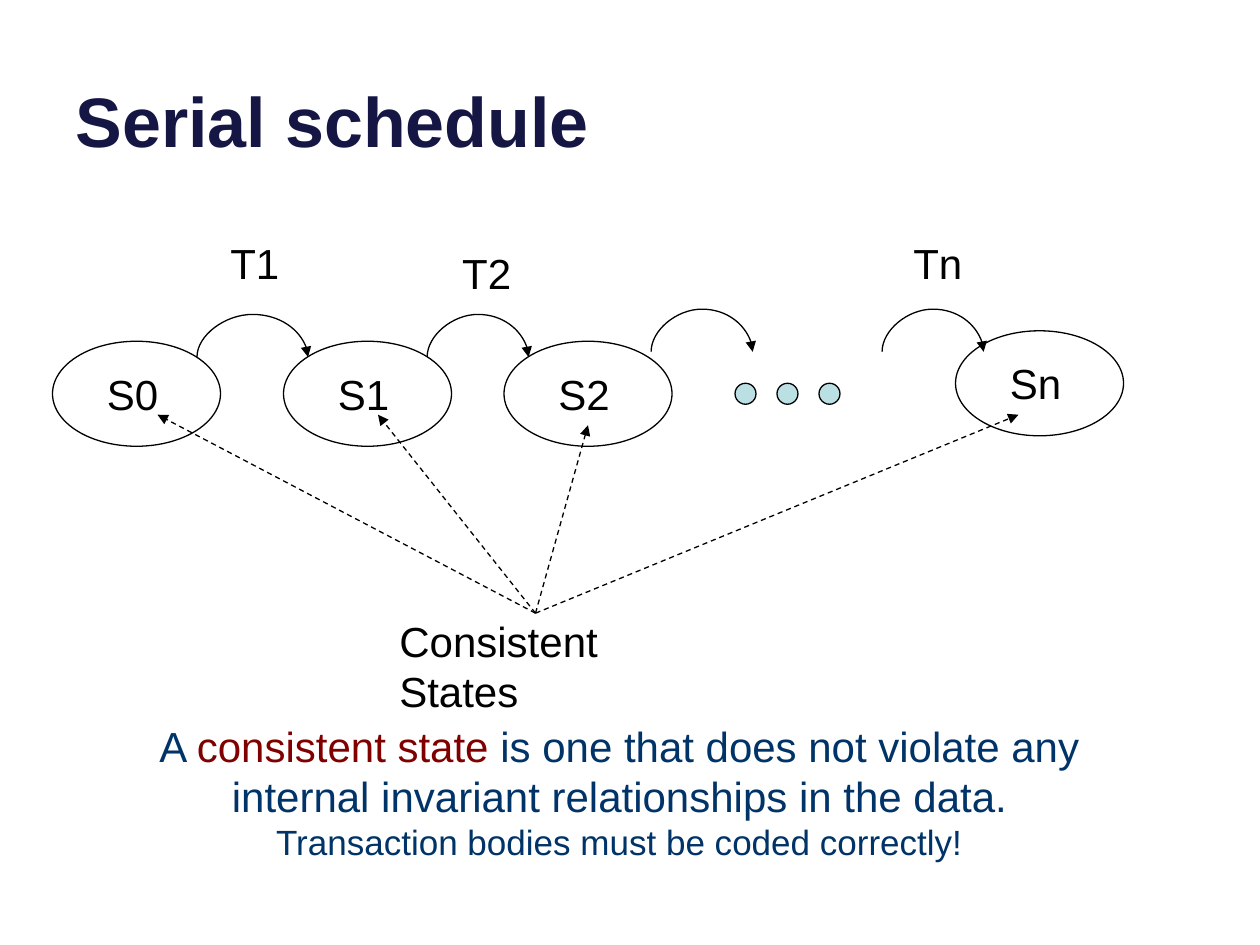
import dataclasses
from typing import Any

import pptx
import pptx.dml.color
import pptx.enum.dml
import pptx.enum.shapes
import pptx.enum.text
import pptx.oxml
import pptx.oxml.ns
import pptx.util

RGBColor = pptx.dml.color.RGBColor
BLACK = RGBColor(0x00, 0x00, 0x00)
TITLE_NAVY = RGBColor(0x16, 0x16, 0x45)
NOTE_BLUE = RGBColor(0x00, 0x33, 0x67)
TERM_RED = RGBColor(0x80, 0x00, 0x00)
DOT_FILL = RGBColor(0xBB, 0xE0, 0xE3)

FONT = "Arial"
CELLS_PER_INCH = 12  # the slide is a grid of 120 columns by 90 rows
STATE_SIZE = (16, 10)
DOT_SIZE = 2
ARC_DEPTH = pptx.util.Emu(1588)  # a curved connector needs some depth to bulge from
ARC_BULGE = -214


@dataclasses.dataclass(frozen=True)
class State:
    name: str
    column: float
    row: float


@dataclasses.dataclass(frozen=True)
class Transition:
    start: float
    end: float
    row: float


@dataclasses.dataclass(frozen=True)
class Label:
    text: str
    column: float
    row: float
    columns: float = 7.08


STATES = [State("Sn", 91, 31.5), State("S0", 5, 32.5),
          State("S1", 27, 32.5), State("S2", 48, 32.5)]
TRANSITIONS = [Transition(84, 93.67, 33.5), Transition(18.75, 29.33, 34),
               Transition(40.67, 50.33, 34), Transition(62, 71.67, 33.5)]
LABELS = [Label("T1", 20.75, 22), Label("T2", 42.83, 23),
          Label("Tn", 85.8, 22), Label("Consistent States", 36.85, 58, 33.7)]
DOT_COLUMNS = range(70, 79, 4)
POINTER_START = (51, 58.4)
POINTER_ENDS = [(36, 39.5), (15, 39.5), (56, 40.5), (97, 39.5)]


def cells(count: float) -> pptx.util.Length:
    return pptx.util.Inches(count / CELLS_PER_INCH)


def add_span(para: Any, text: str, size: float = 24,
             color: RGBColor = BLACK, bold: bool = False) -> None:
    span = para.add_run()
    span.text = text
    span.font.name = FONT
    span.font.size = pptx.util.Pt(size)
    span.font.bold = bold
    span.font.color.rgb = color


def add_text_box(shapes: Any, column: float, row: float, columns: float,
                 rows: float, wrap: bool) -> Any:
    box = shapes.add_textbox(cells(column), cells(row), cells(columns), cells(rows))
    box.text_frame.word_wrap = wrap
    box.text_frame.auto_size = pptx.enum.text.MSO_AUTO_SIZE.SHAPE_TO_FIT_TEXT
    return box


def add_label(shapes: Any, label: Label) -> None:
    box = add_text_box(shapes, label.column, label.row, label.columns, 6, False)
    add_span(box.text_frame.paragraphs[0], label.text)


def style_line(line: Any) -> None:
    line.color.rgb = BLACK
    line.width = pptx.util.Pt(0.75)


def add_ellipse(shapes: Any, column: float, row: float,
                columns: float, rows: float) -> Any:
    ellipse = shapes.add_shape(pptx.enum.shapes.MSO_SHAPE.OVAL, cells(column),
                               cells(row), cells(columns), cells(rows))
    ellipse.shadow.inherit = False
    ellipse.fill.background()
    style_line(ellipse.line)
    return ellipse


def add_state(page: Any, state: State) -> None:
    group = page.shapes.add_group_shape()
    add_ellipse(group.shapes, state.column, state.row, *STATE_SIZE)
    add_label(group.shapes, Label(state.name, state.column + 4, state.row + 2, 7.32))


def finish_arrow(connector: Any, dashed: bool = False) -> None:
    """Style the line, put a head at its end and take away its shadow."""
    style_line(connector.line)
    if dashed:
        connector.line.dash_style = pptx.enum.dml.MSO_LINE.DASH
    properties = connector._element.spPr
    line = properties.find(pptx.oxml.ns.qn("a:ln"))
    namespace = pptx.oxml.ns.nsdecls("a")
    line.append(pptx.oxml.parse_xml(f'<a:tailEnd {namespace} type="triangle"/>'))
    properties.append(pptx.oxml.parse_xml(f"<a:effectLst {namespace}/>"))


def add_transition(page: Any, transition: Transition) -> None:
    """Draw an upright curved connector and turn it a quarter, so it bulges up."""
    middle = cells((transition.start + transition.end) / 2)
    half = (transition.end - transition.start) / 2
    arc = page.shapes.add_connector(
        pptx.enum.shapes.MSO_CONNECTOR.CURVE, middle, cells(transition.row + half),
        middle + ARC_DEPTH, cells(transition.row - half))
    properties = arc._element.spPr
    properties.find(pptx.oxml.ns.qn("a:xfrm")).set("rot", str(90 * 60000))
    geometry = properties.find(pptx.oxml.ns.qn("a:prstGeom"))
    for adjustments in geometry.findall(pptx.oxml.ns.qn("a:avLst")):
        geometry.remove(adjustments)
    geometry.append(pptx.oxml.parse_xml(
        f'<a:avLst {pptx.oxml.ns.nsdecls("a")}>'
        f'<a:gd name="adj1" fmla="val {ARC_BULGE * 100000}"/></a:avLst>'))
    finish_arrow(arc)


def add_pointer(page: Any, end: tuple[float, float]) -> None:
    pointer = page.shapes.add_connector(
        pptx.enum.shapes.MSO_CONNECTOR.STRAIGHT,
        *map(cells, POINTER_START), *map(cells, end))
    finish_arrow(pointer, dashed=True)


def add_title(page: Any) -> None:
    title = page.shapes.title
    title.left, title.top = cells(6), cells(-4.4)
    title.width, title.height = cells(108), cells(20.4)
    title.text_frame.vertical_anchor = pptx.enum.text.MSO_ANCHOR.BOTTOM
    para = title.text_frame.paragraphs[0]
    para.alignment = pptx.enum.text.PP_ALIGN.LEFT
    add_span(para, "Serial schedule", 40, TITLE_NAVY, bold=True)


def add_definition(page: Any) -> None:
    frame = add_text_box(page.shapes, 8, 68, 102, 14.9, True).text_frame
    definition, remark = frame.paragraphs[0], frame.add_paragraph()
    for para in (definition, remark):
        para.alignment = pptx.enum.text.PP_ALIGN.CENTER
    add_span(definition, "A ", color=NOTE_BLUE)
    add_span(definition, "consistent state", color=TERM_RED)
    add_span(definition, " is one that does not violate any internal invariant "
             "relationships in the data.", color=NOTE_BLUE)
    add_span(remark, "Transaction bodies must be coded correctly!", 20, NOTE_BLUE)


def main() -> None:
    deck = pptx.Presentation()
    deck.slide_width, deck.slide_height = cells(120), cells(90)
    page = deck.slides.add_slide(deck.slide_layouts.get_by_name("Title Only"))
    add_title(page)
    for state in STATES:
        add_state(page, state)
    for transition in TRANSITIONS:
        add_transition(page, transition)
    for label in LABELS:
        add_label(page.shapes, label)
    for column in DOT_COLUMNS:
        dot = add_ellipse(page.shapes, column, 36.5, DOT_SIZE, DOT_SIZE)
        dot.fill.solid()
        dot.fill.fore_color.rgb = DOT_FILL
    for end in POINTER_ENDS:
        add_pointer(page, end)
    add_definition(page)
    deck.save("out.pptx")


if __name__ == "__main__":
    main()
